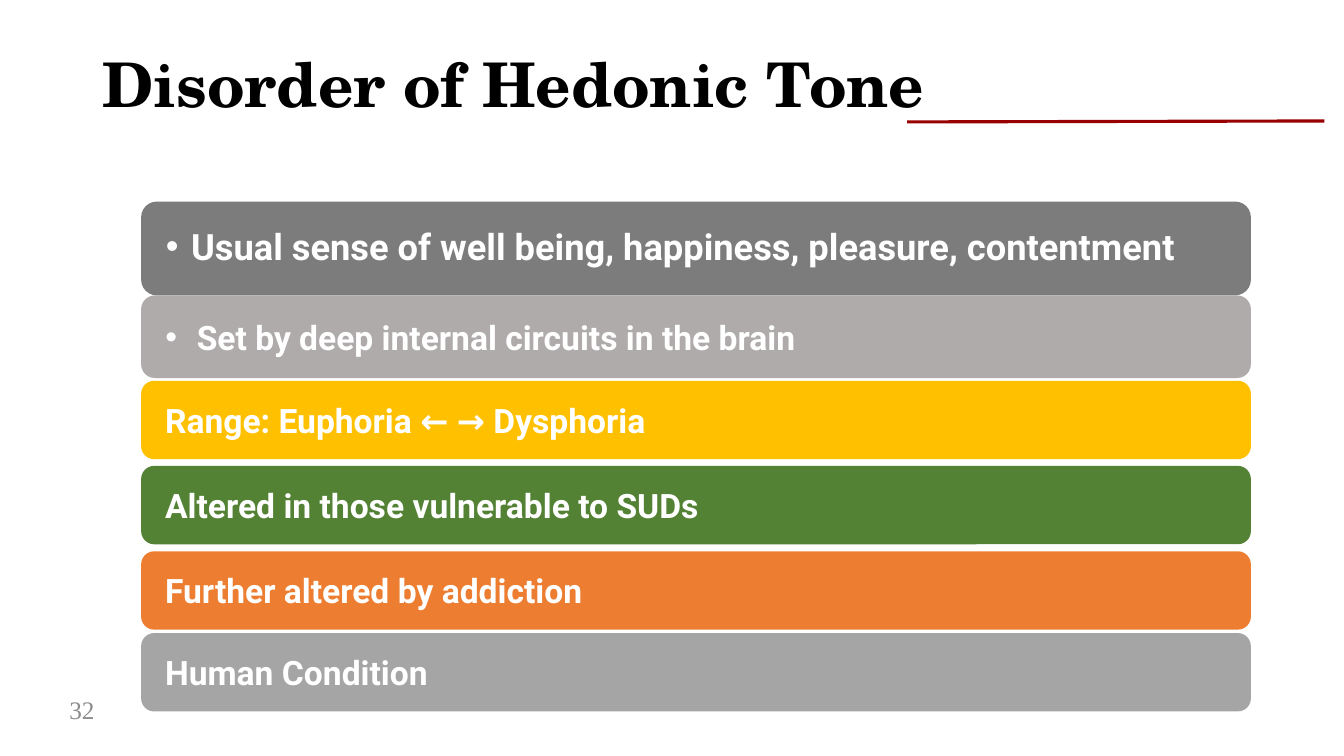
from dataclasses import dataclass

import lxml.etree
import pptx
import pptx.dml.color
import pptx.enum.shapes
import pptx.enum.text
import pptx.oxml.ns
import pptx.util

Pt = pptx.util.Pt
COLORS = {
    "title": "000000",
    "number": "8C8C8C",
    "rule": "980000",
    "bar text": "FFFFFF",
    "dark gray": "7C7C7C",
    "warm gray": "AFABAB",
    "gold": "FFC000",
    "green": "548235",
    "orange": "ED7D31",
    "gray": "A5A5A5",
}
BAR_LEFT, BAR_WIDTH = 100.8, 792.7


@dataclass(frozen=True)
class Bar:
    text: str
    color: str
    top: float
    height: float = 56
    size: float = 24
    bullet_indent: float = 0
    line_spacing: float = 1.0


BARS = [
    Bar("Usual sense of well being, happiness, pleasure, contentment",
        "dark gray", 144, 67, 25.9, 18, 0.9),
    Bar("Set by deep internal circuits in the brain",
        "warm gray", 211, 59, bullet_indent=22.5),
    Bar("Range: Euphoria ← → Dysphoria", "gold", 272),
    Bar("Altered in those vulnerable to SUDs", "green", 332.8),
    Bar("Further altered by addiction", "orange", 393.8),
    Bar("Human Condition", "gray", 452.2),
]


def rgb(name: str) -> pptx.dml.color.RGBColor:
    return pptx.dml.color.RGBColor.from_string(COLORS[name])


def place(shape, left: float, top: float, width: float, height: float) -> None:
    shape.left, shape.top = Pt(left), Pt(top)
    shape.width, shape.height = Pt(width), Pt(height)


def write(shape, text: str, font: str, size: float, color: str,
          bold: bool = False, line_spacing: float = 1.0):
    """Fill the shape with one left-aligned, vertically centred paragraph."""
    frame = shape.text_frame
    frame.word_wrap = True
    frame.auto_size = pptx.enum.text.MSO_AUTO_SIZE.NONE
    frame.vertical_anchor = pptx.enum.text.MSO_ANCHOR.MIDDLE
    paragraph = frame.paragraphs[0]
    paragraph.alignment = pptx.enum.text.PP_ALIGN.LEFT
    paragraph.line_spacing = line_spacing
    paragraph.space_before = Pt(0)
    run = paragraph.add_run()
    run.text = text
    run.font.name = font
    run.font.size = Pt(size)
    run.font.bold = bold
    run.font.color.rgb = rgb(color)
    return paragraph


def add_bullet(paragraph, indent: float) -> None:
    properties = paragraph._p.get_or_add_pPr()
    properties.set("marL", str(Pt(indent)))
    properties.set("indent", str(-Pt(indent)))
    for tag, key, value in (("a:buFont", "typeface", "Arial"),
                            ("a:buChar", "char", "•")):
        lxml.etree.SubElement(properties, pptx.oxml.ns.qn(tag)).set(key, value)


def round_corners(placeholder) -> None:
    """Give a placeholder, once placed, the rounded rectangle outline."""
    geometry = lxml.etree.SubElement(
        placeholder._element.spPr, pptx.oxml.ns.qn("a:prstGeom"), prst="roundRect")
    lxml.etree.SubElement(geometry, pptx.oxml.ns.qn("a:avLst"))


def style_bar(shape, bar: Bar) -> None:
    shape.fill.solid()
    shape.fill.fore_color.rgb = rgb(bar.color)
    shape.line.fill.background()
    shape.shadow.inherit = False
    frame = shape.text_frame
    frame.margin_left = frame.margin_right = Pt(14.4)
    frame.margin_top = frame.margin_bottom = Pt(3.6)
    paragraph = write(shape, bar.text, "Roboto", bar.size, "bar text", True,
                      bar.line_spacing)
    if bar.bullet_indent:
        add_bullet(paragraph, bar.bullet_indent)


def add_rule(slide) -> None:
    rule = slide.shapes.add_connector(
        pptx.enum.shapes.MSO_CONNECTOR.STRAIGHT,
        Pt(648), Pt(87.1), Pt(946), Pt(86.4))
    rule.line.color.rgb = rgb("rule")
    rule.line.width = Pt(2.25)
    lxml.etree.SubElement(rule._element.spPr, pptx.oxml.ns.qn("a:effectLst"))


def main() -> None:
    deck = pptx.Presentation()
    deck.slide_width, deck.slide_height = Pt(960), Pt(540)
    slide = deck.slides.add_slide(deck.slide_layouts[1])

    title = slide.shapes.title
    place(title, 66, 23, 828, 78.5)
    write(title, "Disorder of Hedonic Tone", "TeX Gyre Schola", 44, "title",
          True, 0.9)

    page_number = slide.shapes.add_textbox(Pt(42.5), Pt(492.5), Pt(42.5), Pt(29))
    write(page_number, "32", "Times New Roman", 18, "number")
    add_rule(slide)

    first_bar, *other_bars = BARS
    body = slide.placeholders[1]
    place(body, BAR_LEFT, first_bar.top, BAR_WIDTH, first_bar.height)
    round_corners(body)
    style_bar(body, first_bar)
    for bar in other_bars:
        shape = slide.shapes.add_shape(
            pptx.enum.shapes.MSO_SHAPE.ROUNDED_RECTANGLE,
            Pt(BAR_LEFT), Pt(bar.top), Pt(BAR_WIDTH), Pt(bar.height))
        style_bar(shape, bar)

    deck.save("out.pptx")


if __name__ == "__main__":
    main()
